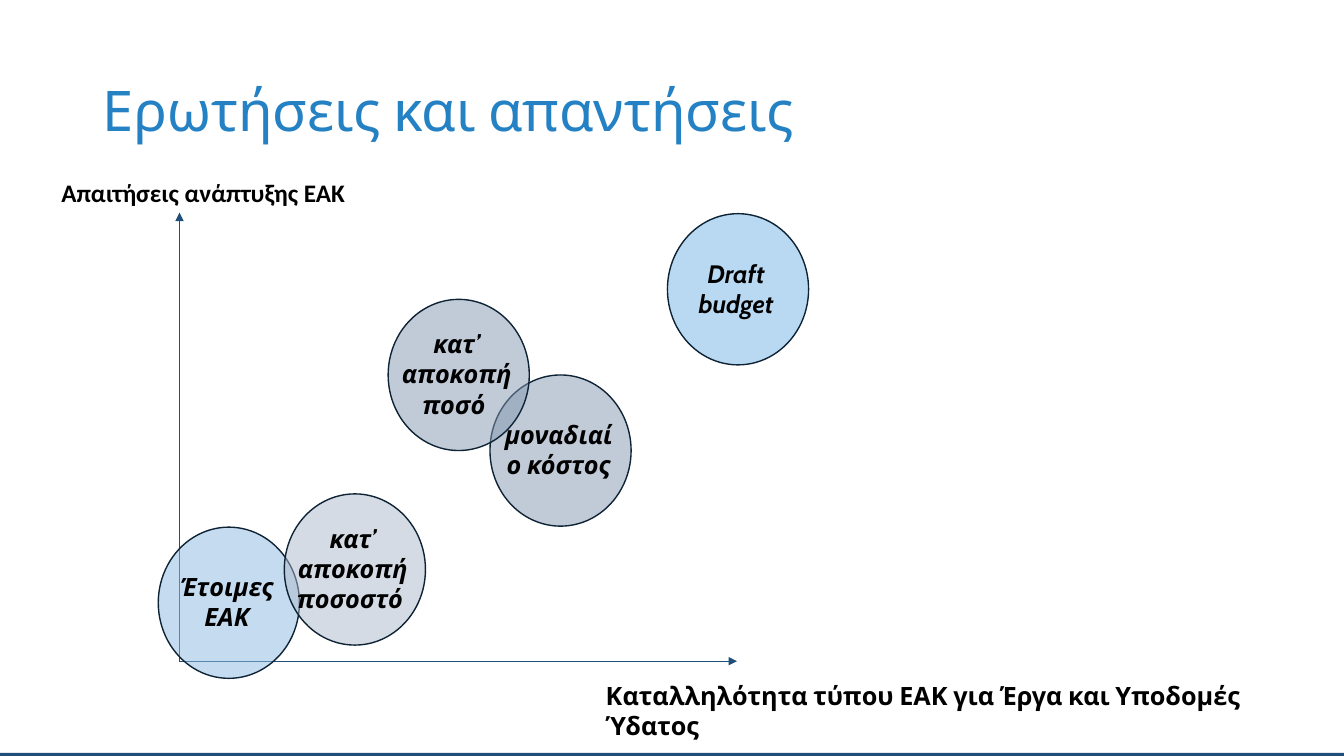
"""Build the question slide that places cost options on two axes."""
from lxml import etree
from pptx import Presentation
from pptx.dml.color import RGBColor
from pptx.enum.shapes import MSO_CONNECTOR as CONN, MSO_SHAPE as SHAPE
from pptx.enum.text import MSO_ANCHOR as ANCHOR, MSO_AUTO_SIZE as AUTO, PP_ALIGN as ALIGN
from pptx.oxml.ns import qn
from pptx.util import Emu, Pt

PX = 9144
COLORS = {
    "title": "2481C3", "axis": "1F4F78", "text": "000000", "outline": "0E2335",
    "ready": "8DBBE2", "rate": "ADB9CA", "cost": "8497B0", "budget": "72B5E5",
}
CIRCLE_W, CIRCLE_H = 140, 150
LABEL_SHIFT = 2
CIRCLES = [
    (157, 523, "ready", "Έτοιμες\nΕΑΚ", 71),
    (282, 490, "rate", "κατ’ αποκοπή ποσοστό ", 101),
    (486, 372, "cost", "μοναδιαίο κόστος", 71),
    (385, 297, "cost", "κατ’ αποκοπή ποσό ", 101),
    (662, 212, "budget", "Draft budget", 71),
]
ORIGIN = (178, 656)
AXIS_ENDS = [(178, 211), (731, 656)]


def px(*lengths):
    return [Emu(n * PX) for n in lengths]


def rgb(name):
    return RGBColor.from_string(COLORS[name])


def add_run(p, text, color, size, font="Cabin", bold=False, italic=False):
    r = p.add_run()
    r.text = text
    f = r.font
    f.name, f.size, f.bold, f.italic = font, Pt(size), bold, italic
    f.color.rgb = rgb(color)


def add_text(shapes, box, text, align=ALIGN.LEFT, **style):
    tf = shapes.add_textbox(*px(*box)).text_frame
    tf.word_wrap = True
    tf.auto_size = AUTO.SHAPE_TO_FIT_TEXT
    p = tf.paragraphs[0]
    p.alignment = align
    for i, line in enumerate(text.split("\n")):
        if i:
            p.add_line_break()
        add_run(p, line, "text", 18, bold=True, **style)


def add_filled(shapes, kind, box, color):
    sp = shapes.add_shape(kind, *px(*box))
    sp.shadow.inherit = False
    sp.fill.solid()
    sp.fill.fore_color.rgb = rgb(color)
    sp.line.fill.background()
    return sp


def add_circle(shapes, x, y, color, label, label_h):
    group = shapes.add_group_shape().shapes
    sp = add_filled(group, SHAPE.OVAL, (x, y, CIRCLE_W, CIRCLE_H), color)
    sp.line.color.rgb = rgb("outline")
    sp.line.width = Pt(1)
    clr = sp.fill._xPr.find(qn("a:solidFill")).find(qn("a:srgbClr"))
    etree.SubElement(clr, qn("a:alpha"), val="50000")
    label_y = y + (CIRCLE_H - label_h) // 2
    add_text(group, (x - LABEL_SHIFT, label_y, CIRCLE_W, label_h), label,
             ALIGN.CENTER, italic=True)


def add_axis(shapes, end):
    axis = shapes.add_connector(CONN.STRAIGHT, *px(*ORIGIN, *end))
    axis.line.color.rgb = rgb("axis")
    axis.line.width = Pt(0.5)
    etree.SubElement(axis.line._get_or_add_ln(), qn("a:tailEnd"), type="triangle")
    etree.SubElement(axis._element.spPr, qn("a:effectLst"))


def set_title(title, text):
    title.left, title.top, title.width, title.height = px(92, 40, 1099, 145)
    tf = title.text_frame
    tf.vertical_anchor = ANCHOR.MIDDLE
    p = tf.paragraphs[0]
    p.alignment = ALIGN.LEFT
    p.line_spacing = 0.9
    add_run(p, text, "title", 40)


def main():
    prs = Presentation()
    prs.slide_width, prs.slide_height = px(1333, 750)
    s = prs.slides.add_slide(prs.slide_layouts[5])
    add_filled(s.shapes, SHAPE.RECTANGLE, (0, 747, 1333, 3), "axis")
    set_title(s.shapes.title, "Ερωτήσεις και απαντήσεις")
    axes = s.shapes.add_group_shape().shapes
    for end in AXIS_ENDS:
        add_axis(axes, end)
    add_text(s.shapes, (51, 171, 307, 40), "Απαιτήσεις ανάπτυξης ΕΑΚ", font="Calibri")
    add_text(s.shapes, (591, 670, 666, 71),
             "Καταλληλότητα τύπου ΕΑΚ για Έργα και Υποδομές Ύδατος")
    for circle in CIRCLES:
        add_circle(s.shapes, *circle)
    prs.save("out.pptx")


if __name__ == "__main__":
    main()
